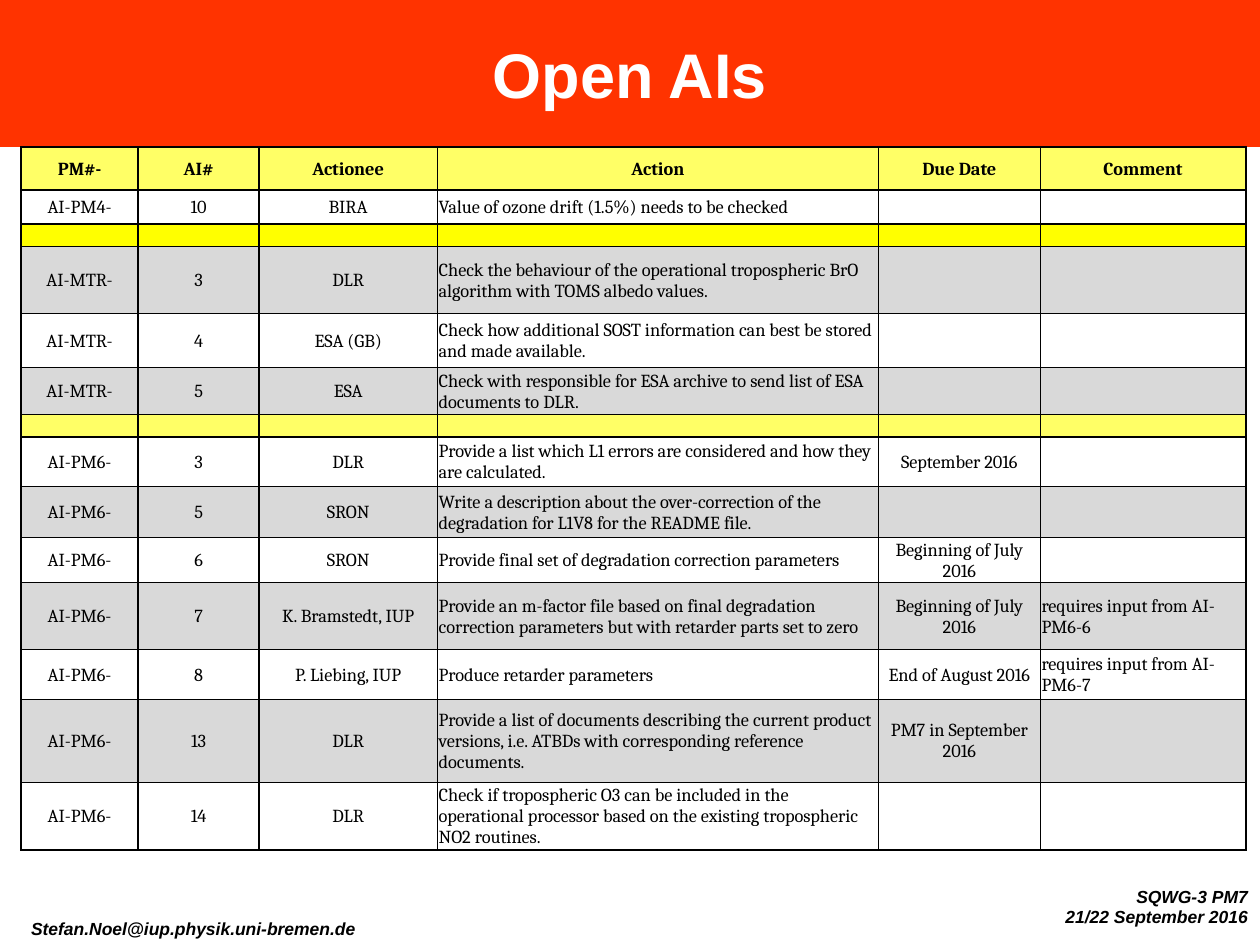
import pptx
import pptx.util
import pptx.dml.color
import pptx.enum.shapes
import pptx.enum.text
import pptx.oxml
import pptx.oxml.ns

Pt = pptx.util.Pt
ALIGN = pptx.enum.text.PP_ALIGN
MIDDLE = pptx.enum.text.MSO_ANCHOR.MIDDLE

BLACK, WHITE, RED = "000000", "FFFFFF", "FF3300"
GREY, YELLOW, PALE_YELLOW = "D9D9D9", "FFFF00", "FFFF66"

COLUMN_WIDTHS = [67, 69, 102, 252, 92.5, 117.5]
LEFT_ALIGNED_COLUMNS = (3, 5)
SEPARATOR = ("",) * 6

# Row height, fill, cell texts
ACTION_ITEMS = [
    (24.6, PALE_YELLOW, ("PM#-", "AI#", "Actionee", "Action", "Due Date", "Comment")),
    (19.4, WHITE, ("AI-PM4-", "10", "BIRA",
                   "Value of ozone drift (1.5%) needs to be checked", "", "")),
    (13, YELLOW, SEPARATOR),
    (38.3, GREY, ("AI-MTR-", "3", "DLR",
                  "Check the behaviour of the operational tropospheric BrO "
                  "algorithm with TOMS albedo values.", "", "")),
    (30.9, WHITE, ("AI-MTR-", "4", "ESA (GB)",
                   "Check how additional SOST information can best be stored "
                   "and made available.", "", "")),
    (26.8, GREY, ("AI-MTR-", "5", "ESA",
                  "Check with responsible for ESA archive to send list of ESA "
                  "documents to DLR.", "", "")),
    (12.8, PALE_YELLOW, SEPARATOR),
    (28.4, WHITE, ("AI-PM6-", "3", "DLR",
                   "Provide a list which L1 errors are considered and how they "
                   "are calculated.", "September 2016", "")),
    (29, GREY, ("AI-PM6-", "5", "SRON",
                "Write a description about the over-correction of the "
                "degradation for L1V8 for the README file.", "", "")),
    (25.4, WHITE, ("AI-PM6-", "6", "SRON",
                   "Provide final set of degradation correction parameters",
                   "Beginning of July 2016", "")),
    (38.3, GREY, ("AI-PM6-", "7", "K. Bramstedt, IUP",
                  "Provide an m-factor file based on final degradation "
                  "correction parameters but with retarder parts set to zero",
                  "Beginning of July 2016", "requires input from AI-PM6-6")),
    (28.4, WHITE, ("AI-PM6-", "8", "P. Liebing, IUP", "Produce retarder parameters",
                   "End of August 2016", "requires input from AI-PM6-7")),
    (47.5, GREY, ("AI-PM6-", "13", "DLR",
                  "Provide a list of documents describing the current product "
                  "versions, i.e. ATBDs with corresponding reference documents.",
                  "PM7 in September 2016", "")),
    (38.3, WHITE, ("AI-PM6-", "14", "DLR",
                   "Check if tropospheric O3 can be included in the operational "
                   "processor based on the existing tropospheric NO2 routines.",
                   "", "")),
]


def color(hex_string):
    return pptx.dml.color.RGBColor.from_string(hex_string)


def format_paragraph(paragraph, alignment, name, size, hex_string, bold=False, italic=False):
    paragraph.alignment = alignment
    for run in paragraph.runs:
        run.font.name = name
        run.font.size = Pt(size)
        run.font.bold = bold
        run.font.italic = italic
        run.font.color.rgb = color(hex_string)


def add_banner(slide, width, height):
    banner = slide.shapes.add_shape(
        pptx.enum.shapes.MSO_SHAPE.RECTANGLE, 0, 0, Pt(width), Pt(height))
    banner.shadow.inherit = False
    banner.fill.solid()
    banner.fill.fore_color.rgb = color(RED)
    banner.line.fill.background()
    # Send the banner behind the title
    slide.shapes.title._element.addprevious(banner._element)


def set_title(slide, text, width, height):
    title = slide.shapes.title
    title.left, title.top, title.width, title.height = 0, 0, Pt(width), Pt(height)
    title.text_frame.text = text
    title.text_frame.vertical_anchor = MIDDLE
    format_paragraph(title.text_frame.paragraphs[0], ALIGN.CENTER, "Arial", 36, WHITE, bold=True)


def add_footer(slide, text, left, top, width, height):
    footer = slide.shapes.add_textbox(Pt(left), Pt(top), Pt(width), Pt(height))
    footer.text_frame.word_wrap = True
    footer.text_frame.text = text
    for paragraph in footer.text_frame.paragraphs:
        paragraph.line_spacing = 0.93
        format_paragraph(paragraph, ALIGN.RIGHT, "Arial", 10, BLACK, bold=True, italic=True)


def set_borders(cell):
    properties = cell._tc.get_or_add_tcPr()
    for side in ("lnL", "lnR", "lnT", "lnB"):
        properties.append(pptx.oxml.parse_xml(
            f'<a:{side} {pptx.oxml.ns.nsdecls("a")} w="{Pt(1)}"><a:solidFill>'
            f'<a:srgbClr val="{BLACK}"/></a:solidFill></a:{side}>'))


def format_cell(cell, text, fill, alignment, bold):
    set_borders(cell)
    cell.fill.solid()
    cell.fill.fore_color.rgb = color(fill)
    cell.vertical_anchor = MIDDLE
    cell.margin_left = cell.margin_right = cell.margin_top = Pt(0.72)
    cell.margin_bottom = 0
    paragraph = cell.text_frame.paragraphs[0]
    if text:
        paragraph.text = text
        format_paragraph(paragraph, alignment, "Cambria", 10.5, BLACK, bold)
    else:
        # A small end mark keeps empty rows at their set height
        paragraph._p.append(pptx.oxml.parse_xml(
            f'<a:endParaRPr {pptx.oxml.ns.nsdecls("a")} sz="800"/>'))


def add_action_table(slide, left, top):
    heights = [height for height, _, _ in ACTION_ITEMS]
    table = slide.shapes.add_table(
        len(ACTION_ITEMS), len(COLUMN_WIDTHS), Pt(left), Pt(top),
        Pt(sum(COLUMN_WIDTHS)), Pt(sum(heights))).table
    for column, width in zip(table.columns, COLUMN_WIDTHS):
        column.width = Pt(width)
    for row_index, (height, fill, texts) in enumerate(ACTION_ITEMS):
        table.rows[row_index].height = Pt(height)
        is_header = row_index == 0
        for column_index, text in enumerate(texts):
            is_left = column_index in LEFT_ALIGNED_COLUMNS and not is_header
            format_cell(table.cell(row_index, column_index), text, fill,
                        ALIGN.LEFT if is_left else ALIGN.CENTER, is_header)


def main():
    presentation = pptx.Presentation()
    presentation.slide_width, presentation.slide_height = Pt(720), Pt(540)
    slide = presentation.slides.add_slide(presentation.slide_layouts[5])

    # Title on its banner
    set_title(slide, "Open AIs", 720, 84)
    add_banner(slide, 720, 84)

    # Footers
    add_footer(slide, "Stefan.Noel@iup.physik.uni-bremen.de", -6, 522, 216, 18)
    add_footer(slide, "SQWG-3 PM7\n21/22 September 2016", 411, 504, 309, 29.5)

    # Open action items
    add_action_table(slide, 12, 84)

    presentation.save("out.pptx")


if __name__ == "__main__":
    main()
